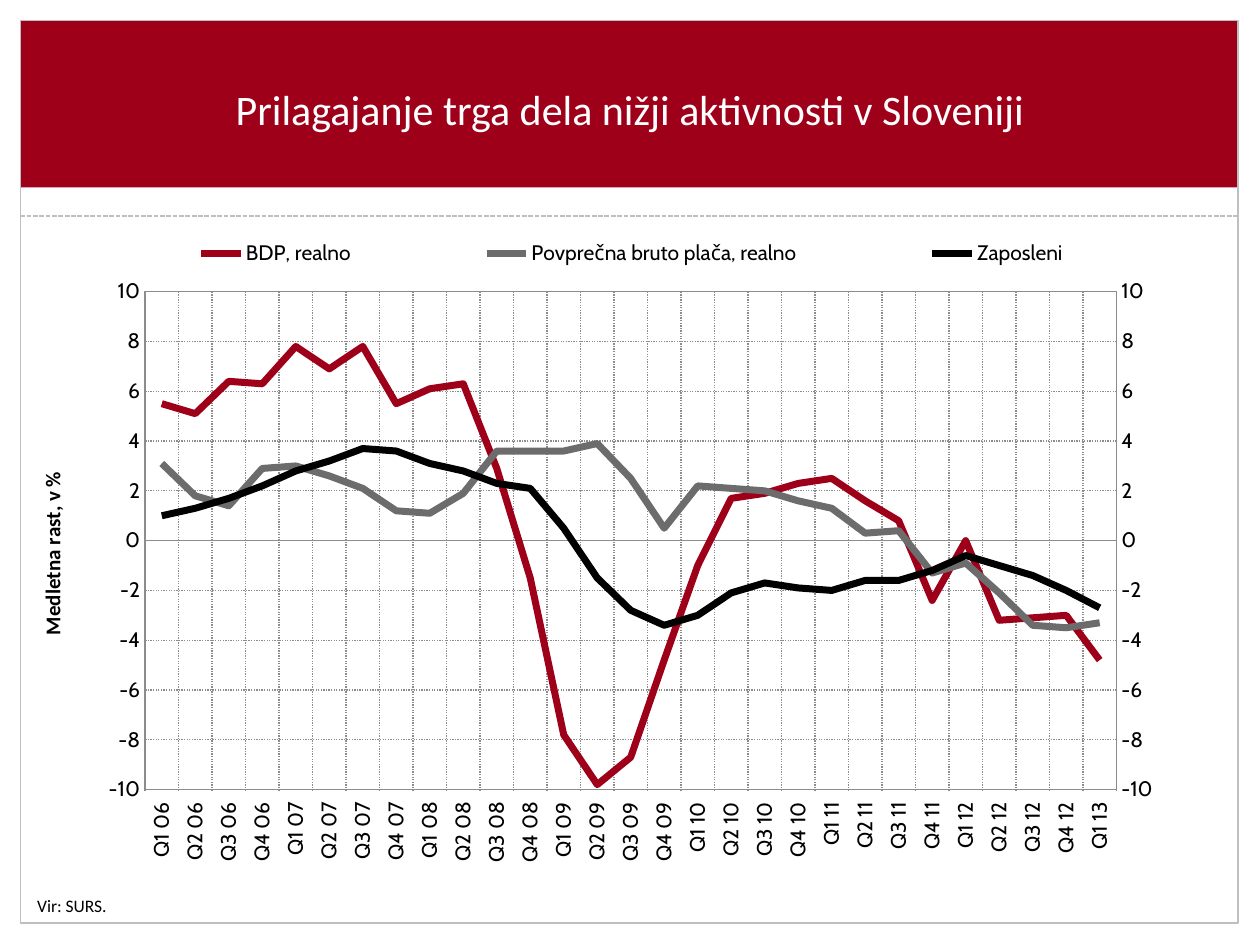
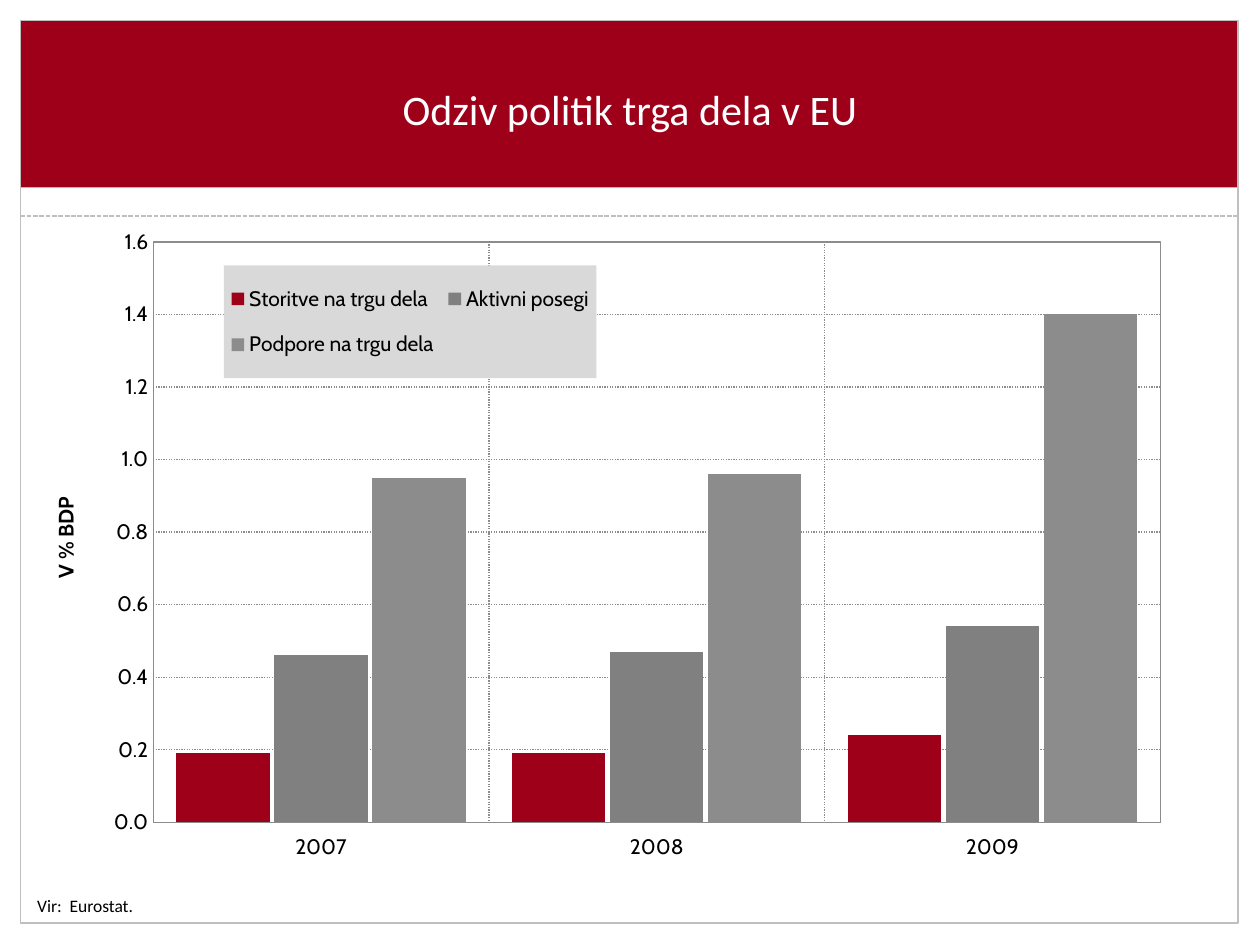
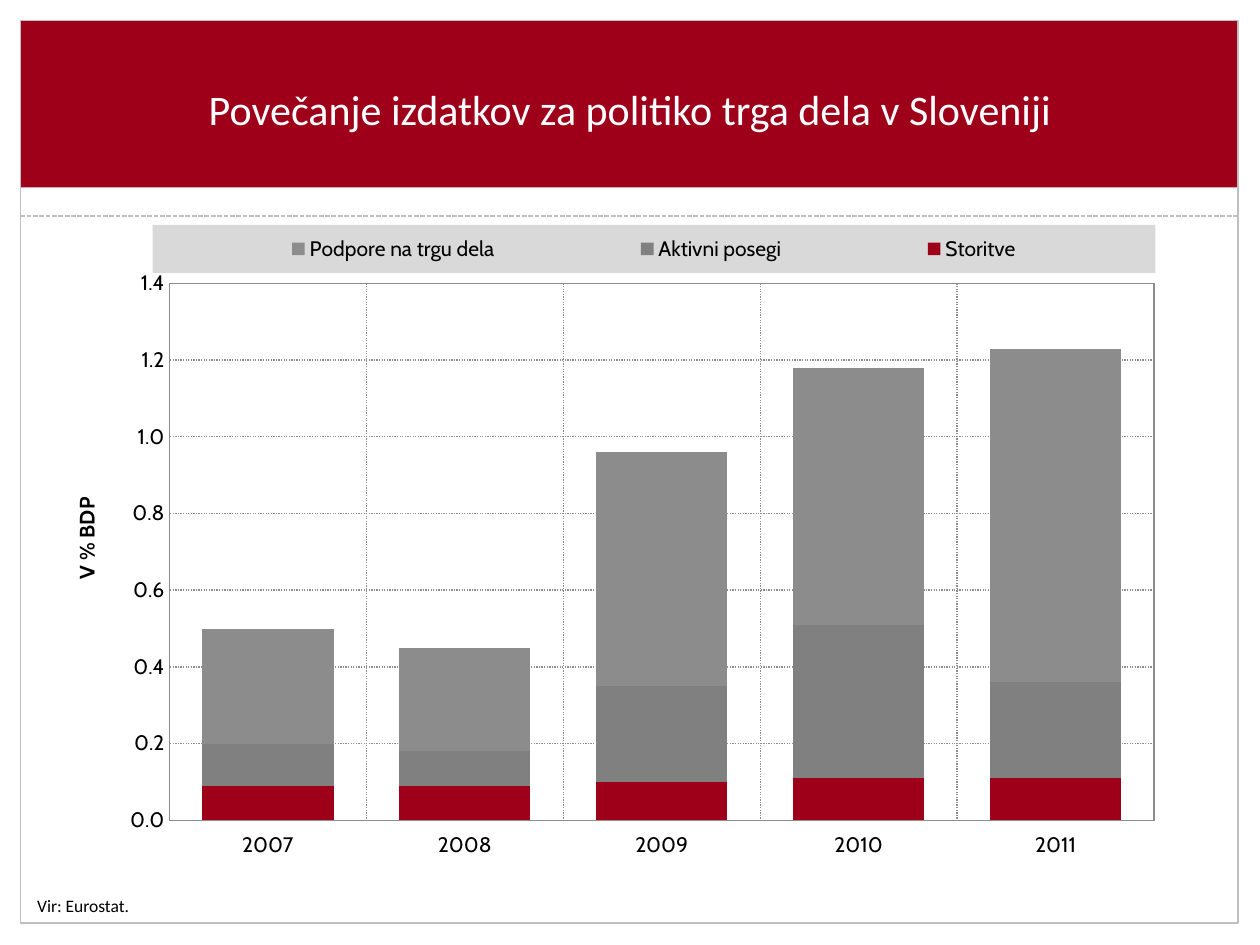
from copy import deepcopy
from dataclasses import dataclass

from pptx import Presentation
from pptx.chart.data import CategoryChartData
from pptx.dml.color import RGBColor
from pptx.enum.chart import (XL_CHART_TYPE, XL_LEGEND_POSITION, XL_TICK_LABEL_POSITION,
                             XL_TICK_MARK)
from pptx.enum.dml import MSO_LINE
from pptx.enum.shapes import MSO_CONNECTOR, MSO_SHAPE
from pptx.enum.text import MSO_ANCHOR, PP_ALIGN
from pptx.oxml import parse_xml
from pptx.oxml.ns import nsdecls, qn
from pptx.util import Cm, Pt


@dataclass(frozen=True)
class Theme:
    red: str = "9E001A"
    white: str = "FFFFFF"
    black: str = "000000"
    border: str = "BFBFBF"
    grid: str = "8C8C8C"
    wage: str = "6C6C6C"
    active: str = "808080"
    support: str = "8C8C8C"
    legend: str = "D9D9D9"
    text_font: str = "Calibri"
    chart_font: str = "Cabin"
    title_size: int = 24
    source_size: int = 10
    chart_size: int = 12


T = Theme()
MARGINS = [(0, 18.62, 25.4, 0.43), (0, 0, 25.4, 0.43), (24.99, 0, 0.41, 19),
           (0.41, 3.58, 24.54, 0.84)]
QUARTERS = [f"Q{q} {year:02d}" for year in range(6, 14) for q in range(1, 5)][:29]
GDP = [5.5, 5.1, 6.4, 6.3, 7.8, 6.9, 7.8, 5.5, 6.1, 6.3, 2.9, -1.5, -7.8, -9.8, -8.7,
       -4.8, -1, 1.7, 1.9, 2.3, 2.5, 1.6, 0.8, -2.4, 0, -3.2, -3.1, -3, -4.8]
WAGES = [3.1, 1.8, 1.4, 2.9, 3, 2.6, 2.1, 1.2, 1.1, 1.9, 3.6, 3.6, 3.6, 3.9, 2.5,
         0.5, 2.2, 2.1, 2, 1.6, 1.3, 0.3, 0.4, -1.3, -0.9, -2.1, -3.4, -3.5, -3.3]
EMPLOYED = [1, 1.3, 1.7, 2.2, 2.8, 3.2, 3.7, 3.6, 3.1, 2.8, 2.3, 2.1, 0.5, -1.5, -2.8,
            -3.4, -3, -2.1, -1.7, -1.9, -2, -1.6, -1.6, -1.2, -0.6, -1, -1.4, -2, -2.7]


def rgb(color):
    return RGBColor.from_string(color)


def style_font(font, size, color, name):
    font.size = Pt(size)
    font.name = name
    font.color.rgb = rgb(color)


def style_line(line, color, width, dash=None):
    line.color.rgb = rgb(color)
    line.width = Pt(width)
    if dash:
        line.dash_style = dash


def add_box(s, box, fill=None, border=None):
    sp = s.shapes.add_shape(MSO_SHAPE.RECTANGLE, *map(Cm, box))
    sp.shadow.inherit = False
    if fill:
        sp.fill.solid()
        sp.fill.fore_color.rgb = rgb(fill)
    else:
        sp.fill.background()
    if border:
        style_line(sp.line, border, 0.75)
    else:
        sp.line.fill.background()


def add_rule(s, x1, x2, y):
    line = s.shapes.add_connector(MSO_CONNECTOR.STRAIGHT, Cm(x1), Cm(y), Cm(x2), Cm(y))
    style_line(line.line, T.border, 0.9, MSO_LINE.SQUARE_DOT)
    line._element.spPr.append(parse_xml(f"<a:effectLst {nsdecls('a')}/>"))


def add_text(s, box, text, size, color, align=PP_ALIGN.LEFT, anchor=MSO_ANCHOR.TOP):
    tf = s.shapes.add_textbox(*map(Cm, box)).text_frame
    tf.word_wrap = True
    tf.vertical_anchor = anchor
    p = tf.paragraphs[0]
    p.alignment = align
    r = p.add_run()
    r.text = text
    style_font(r.font, size, color, T.text_font)


def add_framed_slide(prs, title, source):
    s = prs.slides.add_slide(prs.slide_layouts[6])
    for margin in MARGINS:
        add_box(s, margin, fill=T.white)
    add_box(s, (0.42, 0.41, 24.54, 3.37), fill=T.red)
    add_rule(s, 0.41, 24.94, 4.36)
    add_box(s, (0.42, 0.42, 24.54, 18.19), border=T.border)
    add_text(s, (0.99, 0.99, 23.42, 2.39), title, T.title_size, T.white,
             PP_ALIGN.CENTER, MSO_ANCHOR.MIDDLE)
    add_text(s, (0.5, 17.92, 20.83, 0.69), source, T.source_size, T.black)
    return s


def place(parent, percents, inner=False):
    """Give a chart part a manual layout: left, top and, if present, width, height."""
    for old in parent.findall(qn("c:layout")):
        parent.remove(old)
    target = '<c:layoutTarget val="inner"/>' if inner else ""
    modes = '<c:xMode val="edge"/><c:yMode val="edge"/>'
    values = "".join(f'<c:{tag} val="{pct / 100:.3f}"/>' for tag, pct in zip("xywh", percents))
    layout = parse_xml(f"<c:layout {nsdecls('c')}><c:manualLayout>{target}{modes}{values}"
                       "</c:manualLayout></c:layout>")
    overlay = parent.find(qn("c:overlay"))
    (parent[0] if overlay is None else overlay).addprevious(layout)


def fill_xml(color):
    return f'<a:solidFill><a:srgbClr val="{color}"/></a:solidFill>'


def sppr(content):
    return parse_xml(f"<c:spPr {nsdecls('c', 'a')}>{content}</c:spPr>")


def style_axis(axis, label_position):
    axis.major_tick_mark = axis.minor_tick_mark = XL_TICK_MARK.NONE
    axis.tick_label_position = label_position
    axis.has_major_gridlines = True
    style_line(axis.format.line, T.grid, 0.75)
    style_line(axis.major_gridlines.format.line, T.grid, 0.75, MSO_LINE.ROUND_DOT)
    style_font(axis.tick_labels.font, T.chart_size, T.black, T.chart_font)


def add_axis_title(axis, text, font_name, position):
    r = axis.axis_title.text_frame.paragraphs[0].add_run()
    r.text = text
    style_font(r.font, T.chart_size, T.black, font_name)
    r.font.bold = True
    place(axis.axis_title._element, position)


def add_legend(chart, position, box, fill=None):
    chart.has_legend = True
    legend = chart.legend
    legend.position = position
    legend.include_in_layout = False
    style_font(legend.font, T.chart_size, T.black, T.chart_font)
    place(legend._element, box)
    if fill:
        legend._element.find(qn("c:overlay")).addnext(sppr(fill_xml(fill)))


def add_chart(s, kind, box, plot_box, cats, series, scale, number_format):
    """Add a chart; series holds (name, values, colour), scale (low, high, step)."""
    data = CategoryChartData(number_format="0.0")
    data.categories = cats
    for name, values, _ in series:
        data.add_series(name, values)
    chart = s.shapes.add_chart(kind, *map(Cm, box), data).chart
    chart.has_title = False
    style_font(chart.font, T.chart_size, T.black, T.chart_font)
    chart.plots[0].vary_by_categories = False
    style_axis(chart.category_axis, XL_TICK_LABEL_POSITION.LOW)
    value_axis = chart.value_axis
    style_axis(value_axis, XL_TICK_LABEL_POSITION.NEXT_TO_AXIS)
    value_axis.tick_labels.number_format = number_format
    value_axis.tick_labels.number_format_is_linked = False
    value_axis.minimum_scale, value_axis.maximum_scale, value_axis.major_unit = scale
    area = chart.element.find(".//" + qn("c:plotArea"))
    place(area, plot_box, inner=True)
    area.append(sppr(f'<a:noFill/><a:ln w="9525">{fill_xml(T.grid)}</a:ln>'))
    return chart


def move_last_series_right(chart):
    """Draw the last series against a second value axis on the right."""
    left = chart.plots[0]._element
    right = deepcopy(left)
    for ser in right.findall(qn("c:ser"))[:-1]:
        right.remove(ser)
    left.remove(left.findall(qn("c:ser"))[-1])
    left.addnext(right)

    area = left.getparent()
    cat_axis, val_axis = area.find(qn("c:catAx")), area.find(qn("c:valAx"))
    right_cat, right_val = deepcopy(cat_axis), deepcopy(val_axis)
    val_axis.addnext(right_val)
    right_val.addnext(right_cat)
    for axis, own, other in ((right_cat, "5001", "5002"), (right_val, "5002", "5001")):
        axis.find(qn("c:axId")).set("val", own)
        axis.find(qn("c:crossAx")).set("val", other)
        for tag in ("c:majorGridlines", "c:title"):
            for part in axis.findall(qn(tag)):
                axis.remove(part)
    for ref, number in zip(right.findall(qn("c:axId")), ("5001", "5002")):
        ref.set("val", number)
    right_cat.find(qn("c:delete")).set("val", "1")
    right_val.find(qn("c:axPos")).set("val", "r")
    right_val.find(qn("c:crosses")).set("val", "max")


def add_line_chart(s):
    series = [("BDP, realno", GDP, T.red),
              ("Povprečna bruto plača, realno", WAGES, T.wage),
              ("Zaposleni", EMPLOYED, T.black)]
    chart = add_chart(s, XL_CHART_TYPE.LINE, (0.5, 4.52, 24, 13.21),
                      (10.1, 10.3, 81.6, 76), QUARTERS, series, (-10, 10, 2), "0")
    for ser, (_, _, color) in zip(chart.plots[0].series, series):
        ser.smooth = False
        style_line(ser.format.line, color, 4)
    labels = chart.category_axis.tick_labels.font._element.getparent().getparent()
    labels.getparent().find(qn("a:bodyPr")).set("rot", "-5400000")
    add_axis_title(chart.value_axis, "Medletna rast, v %", T.text_font, (0.8, 37.2))
    add_legend(chart, XL_LEGEND_POSITION.TOP, (4, 1, 94, 7))
    move_last_series_right(chart)


def add_column_chart(s, kind, box, plot_box, cats, series, top, overlap, title_at, legend_box):
    chart = add_chart(s, kind, box, plot_box, cats, series, (0, top, 0.2), "0.0")
    plot = chart.plots[0]
    plot.gap_width = 50
    plot.overlap = overlap
    for ser, (_, _, color) in zip(plot.series, series):
        ser.format.fill.solid()
        ser.format.fill.fore_color.rgb = rgb(color)
    add_axis_title(chart.value_axis, "V % BDP", T.chart_font, title_at)
    add_legend(chart, XL_LEGEND_POSITION.RIGHT, legend_box, T.legend)


def main():
    prs = Presentation()
    prs.slide_width, prs.slide_height = Cm(25.4), Cm(19.05)

    s = add_framed_slide(prs, "Prilagajanje trga dela nižji aktivnosti v Sloveniji", "Vir: SURS.")
    add_line_chart(s)

    s = add_framed_slide(prs, "Odziv politik trga dela v EU", "Vir:  Eurostat.")
    add_column_chart(
        s, XL_CHART_TYPE.COLUMN_CLUSTERED, (0.89, 4.52, 23.39, 13.21), (9.4, 2.7, 86.8, 88.6),
        ["2007", "2008", "2009"],
        [("Storitve na trgu dela", [0.19, 0.19, 0.24], T.red),
         ("Aktivni posegi", [0.46, 0.47, 0.54], T.active),
         ("Podpore na trgu dela", [0.95, 0.96, 1.4], T.support)],
        top=1.6, overlap=-5, title_at=(0.3, 41), legend_box=(15.5, 6.3, 32.1, 17.2))

    s = add_framed_slide(prs, "Povečanje izdatkov za politiko trga dela v Sloveniji",
                         "Vir: Eurostat.")
    add_column_chart(
        s, XL_CHART_TYPE.COLUMN_STACKED, (1.29, 4.52, 22.61, 13.28), (9.4, 9, 87.8, 81.5),
        ["2007", "2008", "2009", "2010", "2011"],
        [("Storitve", [0.09, 0.09, 0.1, 0.11, 0.11], T.red),
         ("Aktivni posegi", [0.11, 0.09, 0.25, 0.4, 0.25], T.active),
         ("Podpore na trgu dela", [0.3, 0.27, 0.61, 0.67, 0.87], T.support)],
        top=1.4, overlap=100, title_at=(0.4, 40.9), legend_box=(7.9, 0.1, 89.4, 7.3))

    prs.save("out.pptx")


if __name__ == "__main__":
    main()
